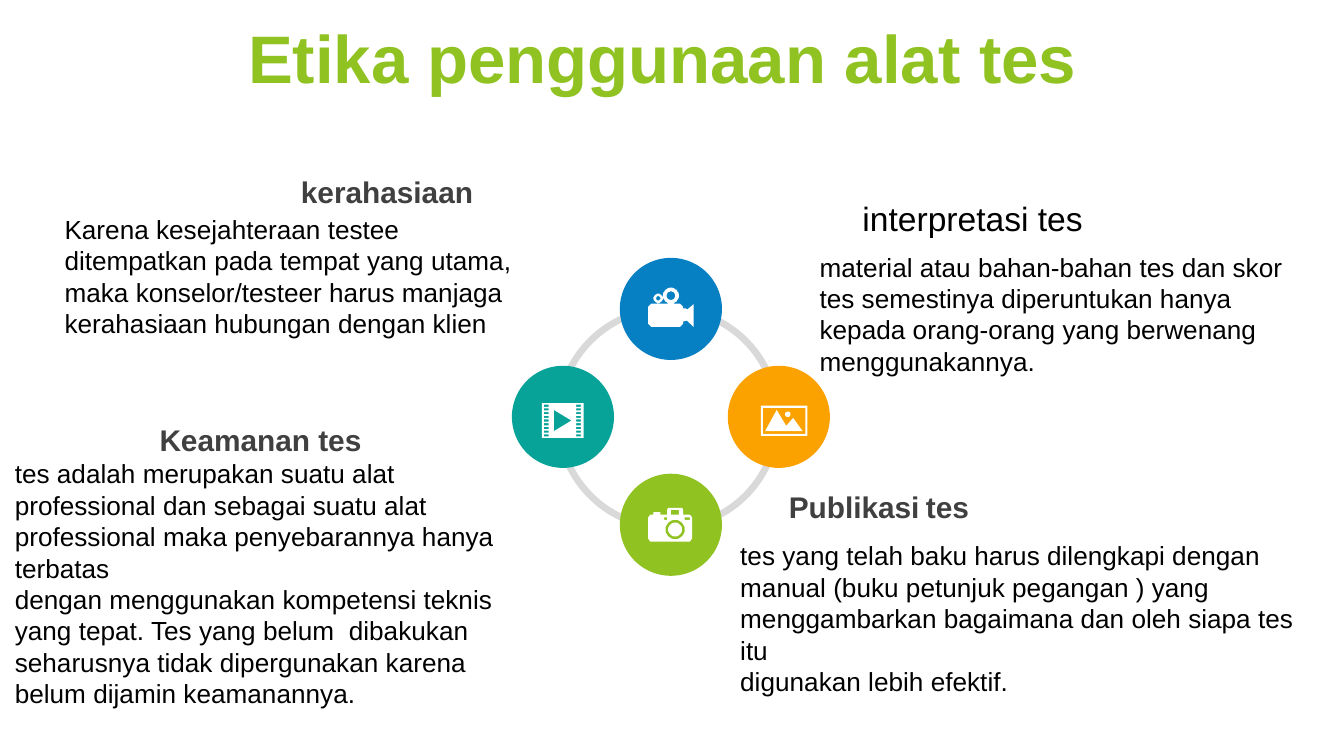
from math import cos, pi, sin

from pptx import Presentation
from pptx import util as u
from pptx.dml.color import RGBColor
from pptx.enum import shapes, text

Cm = u.Cm
THEME = {
    "font": "Arial",
    "white": RGBColor.from_string("FFFFFF"),
    "ring": RGBColor.from_string("D9D9D9"),
    "blue": RGBColor.from_string("0680C3"),
    "green": RGBColor.from_string("90C221"),
    "teal": RGBColor.from_string("07A398"),
    "orange": RGBColor.from_string("FBA200"),
    # text styles: size, colour, bold
    "title": (36, RGBColor.from_string("90C221"), True),
    "head": (16, RGBColor.from_string("404040"), True),
    "lead": (18, RGBColor.from_string("000000"), False),
    "body": (14, RGBColor.from_string("000000"), False),
    "gap": 12,
}


def style(line, name):
    """Give a paragraph one of the theme's text styles."""
    size, color, bold = THEME[name]
    line.font.name = THEME["font"]
    line.font.size = u.Pt(size)
    line.font.bold = bold
    line.font.color.rgb = color


def loop(x, y, w, h, sides=4):
    """Corners of a box, or of a round outline when it has many sides."""
    if sides == 4:
        return [(x, y), (x + w, y), (x + w, y + h), (x, y + h)]
    turns = [2 * pi * i / sides for i in range(sides)]
    return [(x + w / 2 * (1 + cos(a)), y + h / 2 * (1 + sin(a))) for a in turns]


deck = Presentation()
deck.slide_width, deck.slide_height = Cm(25.4), Cm(14.29)
slide = deck.slides.add_slide(deck.slide_layouts[5])
items = slide.shapes

# Title
title = items.title
title.left, title.top, title.width, title.height = Cm(0), Cm(0.08), Cm(25.4), Cm(2.16)
frame = title.text_frame
frame.auto_size = text.MSO_AUTO_SIZE.NONE
frame.vertical_anchor = text.MSO_ANCHOR.MIDDLE
frame.margin_left = frame.margin_right = Cm(0.19)
frame.margin_top = frame.margin_bottom = Cm(0.1)
frame.text = "Etika penggunaan alat tes "
line = frame.paragraphs[0]
line.alignment = text.PP_ALIGN.CENTER
line.line_spacing = 0.9
style(line, "title")

# Ring with four discs around its hub
ring = items.add_shape(shapes.MSO_SHAPE.DONUT, Cm(10.49), Cm(5.77), Cm(4.27), Cm(4.27))
ring.adjustments[0] = 0.03
ring.fill.solid()
ring.fill.fore_color.rgb = THEME["ring"]
ring.line.fill.background()
ring.shadow.inherit = False

hub_x, hub_y, reach, size = 12.68, 7.88, 2.04, 1.93
for color, dx, dy in [("blue", 0, -1), ("green", 0, 1), ("teal", -1, 0), ("orange", 1, 0)]:
    left = hub_x + dx * reach - size / 2
    top = hub_y + dy * reach - size / 2
    disc = items.add_shape(shapes.MSO_SHAPE.OVAL, Cm(left), Cm(top), Cm(size), Cm(size))
    disc.fill.solid()
    disc.fill.fore_color.rgb = THEME[color]
    disc.line.fill.background()
    disc.shadow.inherit = False

# Icons: outlines in hundredths of a centimetre, inner ones cut holes
camera = [
    [(38, 0), (64, 0), (66, 3), (66, 13), (79, 13), (83, 18), (83, 58), (79, 64),
     (4, 64), (0, 58), (0, 18), (4, 13), (10, 13), (10, 8), (23, 8), (23, 13),
     (36, 13), (36, 3)],
    loop(33, 23, 36, 36, 32),
    loop(38, 28, 26, 26, 32),
    loop(30, 18, 6, 5),
    loop(69, 18, 10, 5),
    loop(43, 4, 15, 9),
]
video = [
    [(6, 30), (60, 30), (66, 36), (66, 39), (71, 39), (74, 41), (86, 31), (86, 74),
     (73, 62), (66, 64), (66, 68), (60, 74), (6, 74), (0, 68), (0, 36)],
    loop(28, 0, 30, 30, 32),
    loop(35, 7, 16, 16, 32),
    loop(10, 11, 18, 18, 32),
    loop(15, 16, 8, 8, 32),
]
film = [loop(0, 0, 79, 66), [(23, 13), (23, 53), (56, 33)]]
film += [loop(x, 3 + 7 * i, 9, 4) for i in range(9) for x in (4, 65)]
photo = [
    loop(0, 0, 88, 57),
    loop(4, 4, 80, 49),
    [(30, 8), (48, 38), (61, 23), (79, 48), (8, 48)],
    loop(46, 11, 10, 10, 32),
]
for left, top, loops in [
    (12.25, 9.6, camera),
    (12.25, 5.44, video),
    (10.24, 7.62, film),
    (14.38, 7.67, photo),
]:
    pen = items.build_freeform(*loops[0][0], scale=Cm(0.01))
    pen.add_line_segments(loops[0][1:])
    for points in loops[1:]:
        pen.move_to(*points[0])
        pen.add_line_segments(points[1:])
    icon = pen.convert_to_shape(Cm(left), Cm(top))
    icon.fill.solid()
    icon.fill.fore_color.rgb = THEME["white"]
    icon.line.fill.background()
    icon.shadow.inherit = False

# Headings and their texts
mid, side = text.PP_ALIGN.CENTER, text.PP_ALIGN.LEFT
for left, top, width, height, name, align, lines in [
    (0.99, 7.85, 7.87, 0.94, "head", mid, ["Keamanan tes"]),
    (3.38, 3.15, 7.87, 0.94, "head", mid, ["kerahasiaan"]),
    (16.05, 3.61, 4.85, 1.02, "lead", side, ["interpretasi tes"]),
    (0.97, 3.91, 9.65, 2.64, "body", side, [
        "Karena kesejahteraan testee ditempatkan pada tempat yang utama, "
        "maka konselor/testeer harus manjaga kerahasiaan hubungan dengan klien",
    ]),
    (0.03, 8.53, 9.68, 4.45, "body", side, [
        "tes adalah merupakan suatu alat professional dan sebagai suatu alat "
        "professional maka penyebarannya hanya terbatas",
        "dengan menggunakan kompetensi teknis yang tepat. Tes yang belum  dibakukan",
        "seharusnya tidak dipergunakan karena",
        "belum dijamin keamanannya.",
    ]),
    (15.24, 4.62, 9.35, 2.64, "body", side, [
        "material atau bahan-bahan tes dan skor tes semestinya diperuntukan hanya",
        "kepada orang-orang yang berwenang",
        "menggunakannya.",
    ]),
    (13.74, 10.08, 11.53, 2.64, "body", side, [
        "tes yang telah baku harus dilengkapi dengan",
        "manual (buku petunjuk pegangan ) yang menggambarkan bagaimana "
        "dan oleh siapa tes itu",
        "digunakan lebih efektif.",
    ]),
    (14.66, 9.12, 7.87, 0.94, "head", side, ["Publikasi"]),
]:
    box = items.add_textbox(Cm(left), Cm(top), Cm(width), Cm(height))
    frame = box.text_frame
    frame.word_wrap = True
    frame.auto_size = text.MSO_AUTO_SIZE.SHAPE_TO_FIT_TEXT
    frame.text = "\n".join(lines)
    for line in frame.paragraphs:
        line.alignment = align
        style(line, name)

# The last heading has a narrower space before its second word
space = line.add_run()
space.text = " "
space.font.size = u.Pt(THEME["gap"])
line.add_run().text = "tes"

deck.save("out.pptx")
